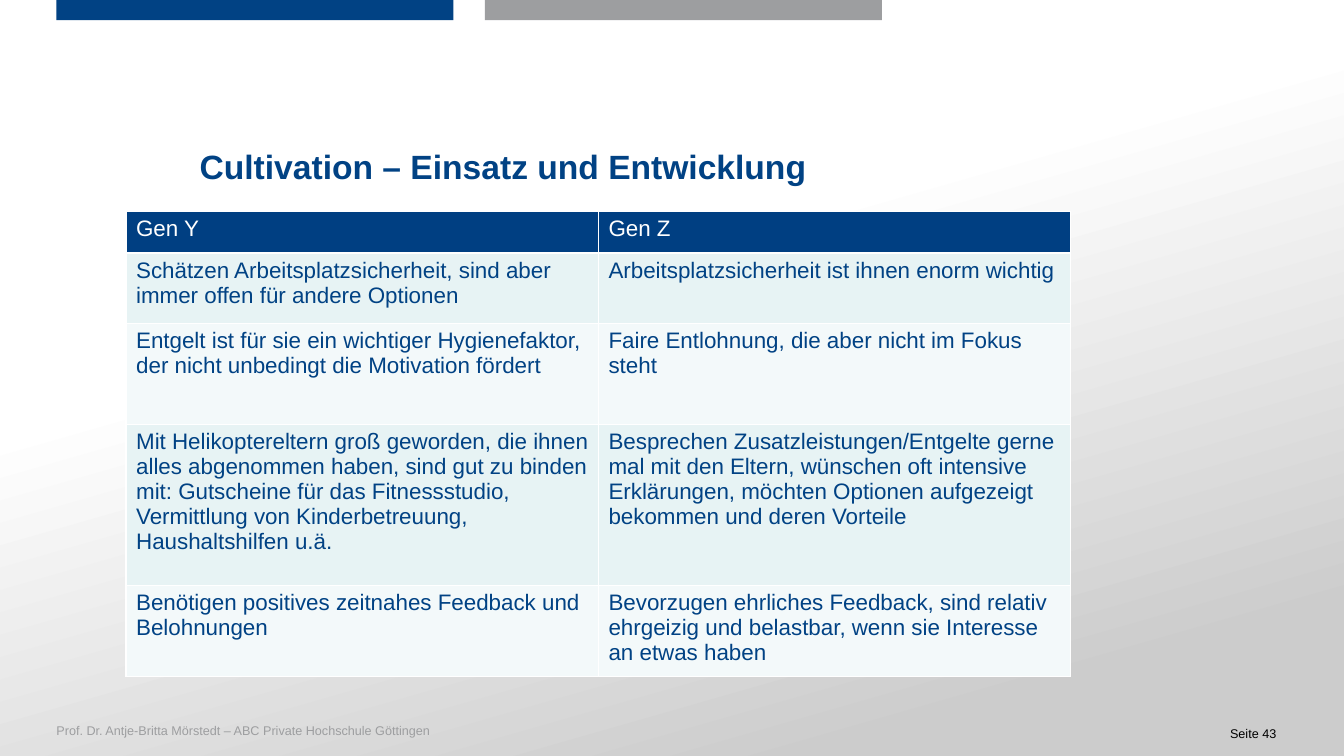
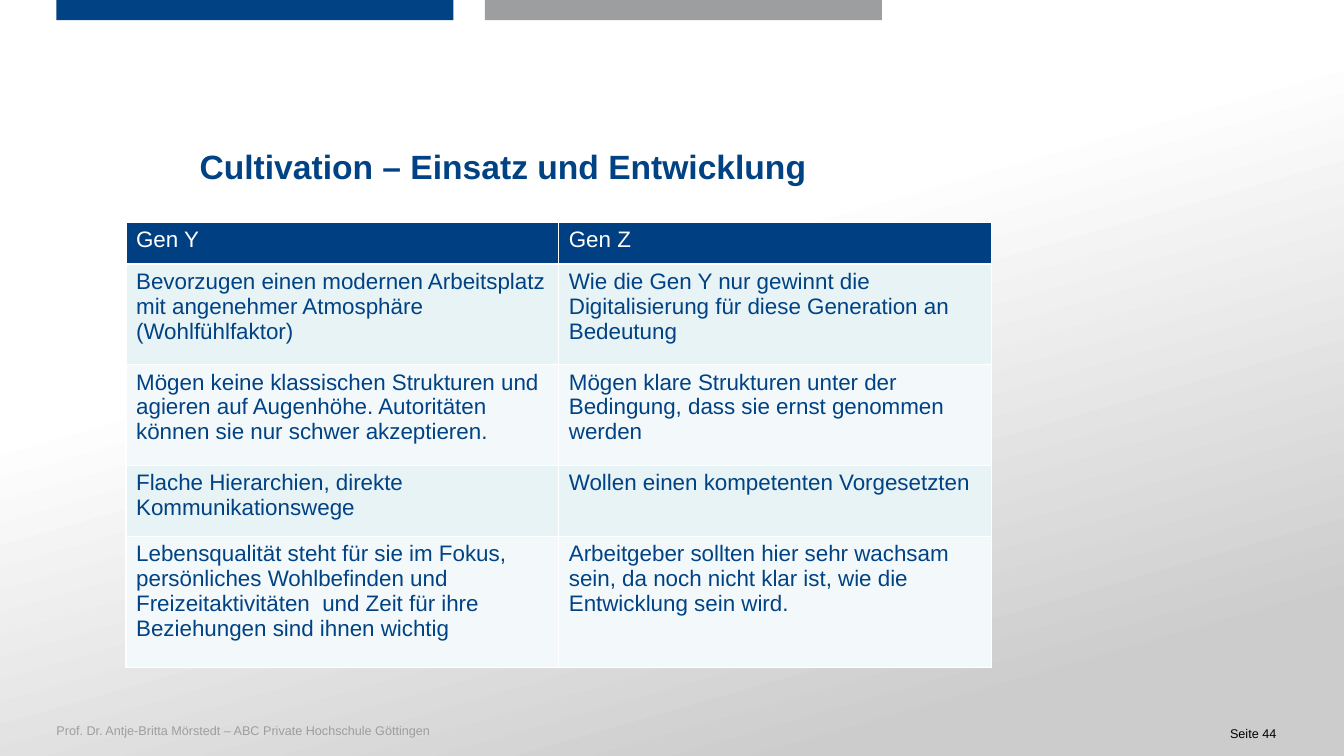
from pptx import Presentation, util as u
from pptx.dml.color import RGBColor
from pptx.enum import shapes, text
from pptx.oxml import parse_xml
from pptx.oxml.ns import nsdecls

COLORS = {
    "blue": "014284", "header": "003F82", "grey": "9D9EA0",
    "band_dark": "E7F3F4", "band_light": "F3F9FA",
    "white": "FFFFFF", "shade": "CCCCCC", "black": "000000",
}
FONT = "Arial"
COLS, ROWS = 100, 75  # grid over the whole slide
MARGIN, BAR, BAR_PITCH = 4.2, 29.54, 31.88
TABLE_LEFT = 9.38
FOOTER = "Prof. Dr. Antje-Britta Mörstedt – ABC Private Hochschule Göttingen"
TITLE = "Cultivation – Einsatz und Entwicklung"
HEADS = ("Gen Y", "Gen Z")


def rgb(name):
    return RGBColor.from_string(COLORS[name])


class Deck:
    def __init__(self):
        self.prs = Presentation()
        self.prs.slide_width, self.prs.slide_height = u.Inches(13.33), u.Inches(7.5)
        self.s = None

    def x(self, cols):
        return round(self.prs.slide_width * cols / COLS)

    def y(self, rows):
        return round(self.prs.slide_height * rows / ROWS)

    def box(self, left, top, width, height):
        return self.x(left), self.y(top), self.x(width), self.y(height)

    def slide(self, number):
        """Start a slide with the shared background, bars and footer."""
        self.s = self.prs.slides.add_slide(self.prs.slide_layouts[6])
        self.background()
        self.text(FOOTER, (MARGIN, 71.7, 79.2, 1.5), 9, "grey")
        for i, color in enumerate(("blue", "grey")):
            self.rect((MARGIN + i * BAR_PITCH, 0, BAR, 2), color)
        self.text(f"Seite {number}", (90.7, 71.4, 6.1, 2.7), 9, "black",
                  inset=(0.11, 0.06), wrap=False)

    def rect(self, area, color=None):
        sp = self.s.shapes.add_shape(shapes.MSO_SHAPE.RECTANGLE, *self.box(*area))
        sp.shadow.inherit = False
        sp.line.fill.background()
        if color:
            sp.fill.solid()
            sp.fill.fore_color.rgb = rgb(color)
        return sp

    def background(self):
        fill = self.rect((0, 0, COLS, ROWS)).fill
        fill.gradient()
        fill.gradient_angle = 360 - 74
        for stop, position, color in zip(fill.gradient_stops, (0.38, 0.87), ("white", "shade")):
            stop.position = position
            stop.color.rgb = rgb(color)

    def style(self, p, size, color, bold=False):
        for r in p.runs:
            r.font.name, r.font.size, r.font.bold = FONT, u.Pt(size), bold
            r.font.color.rgb = rgb(color)

    def text(self, words, area, size, color, bold=False, align=text.PP_ALIGN.LEFT,
             inset=(0, 0), wrap=True):
        tf = self.s.shapes.add_textbox(*self.box(*area)).text_frame
        tf.word_wrap = wrap
        tf.margin_left = tf.margin_right = u.Inches(inset[0])
        tf.margin_top = tf.margin_bottom = u.Inches(inset[1])
        tf.text = words
        p = tf.paragraphs[0]
        p.alignment = align
        self.style(p, size, color, bold)

    def title(self, words):
        self.text(words, (TABLE_LEFT, 14, 56.1, 12.5), 24, "blue", bold=True,
                  align=text.PP_ALIGN.CENTER, inset=(0.1, 0.05))

    def cell(self, cell, words, color, fill):
        cell.text = words
        self.style(cell.text_frame.paragraphs[0], 16, color)
        for side in "LRTB":
            cell._tc.get_or_add_tcPr().append(parse_xml(
                f'<a:ln{side} w="{u.Pt(1)}" {nsdecls("a")}><a:solidFill>'
                f'<a:srgbClr val="{COLORS["white"]}"/></a:solidFill></a:ln{side}>'))
        cell.fill.solid()
        cell.fill.fore_color.rgb = rgb(fill)

    def table(self, top, width, heights, rows):
        area = self.box(TABLE_LEFT, top, width, sum(heights))
        table = self.s.shapes.add_table(len(rows), len(rows[0]), *area).table
        for row, height in zip(table.rows, heights):
            row.height = self.y(height)
        for i, row in enumerate(rows):
            color = "blue" if i else "white"
            fill = ("band_dark" if i % 2 else "band_light") if i else "header"
            for j, words in enumerate(row):
                self.cell(table.cell(i, j), words, color, fill)


SLIDES = [
    dict(number=43, top=21, width=70.3, heights=(4.1, 7, 10, 16, 9), rows=[
        ("Schätzen Arbeitsplatzsicherheit, sind aber immer offen für andere Optionen",
         "Arbeitsplatzsicherheit ist ihnen enorm wichtig"),
        ("Entgelt ist für sie ein wichtiger Hygienefaktor, der nicht unbedingt die "
         "Motivation fördert",
         "Faire Entlohnung, die aber nicht im Fokus steht"),
        ("Mit Helikoptereltern groß geworden, die ihnen alles abgenommen haben, sind gut "
         "zu binden mit: Gutscheine für das Fitnessstudio, Vermittlung von "
         "Kinderbetreuung, Haushaltshilfen u.ä.",
         "Besprechen Zusatzleistungen/Entgelte gerne mal mit den Eltern, wünschen oft "
         "intensive Erklärungen, möchten Optionen aufgezeigt bekommen und deren Vorteile"),
        ("Benötigen positives zeitnahes Feedback und Belohnungen",
         "Bevorzugen ehrliches Feedback, sind relativ ehrgeizig und belastbar, wenn sie "
         "Interesse an etwas haben"),
    ]),
    dict(number=44, top=22.1, width=64.4, heights=(4.1, 10, 10, 7, 13), rows=[
        ("Bevorzugen einen modernen Arbeitsplatz mit angenehmer Atmosphäre "
         "(Wohlfühlfaktor)",
         "Wie die Gen Y nur gewinnt die Digitalisierung für diese Generation an Bedeutung"),
        ("Mögen keine klassischen Strukturen und agieren auf Augenhöhe. Autoritäten "
         "können sie nur schwer akzeptieren.",
         "Mögen klare Strukturen unter der Bedingung, dass sie ernst genommen werden"),
        ("Flache Hierarchien, direkte Kommunikationswege",
         "Wollen einen kompetenten Vorgesetzten"),
        ("Lebensqualität steht für sie im Fokus, persönliches Wohlbefinden und "
         "Freizeitaktivitäten  und Zeit für ihre Beziehungen sind ihnen wichtig",
         "Arbeitgeber sollten hier sehr wachsam sein, da noch nicht klar ist, wie die "
         "Entwicklung sein wird."),
    ]),
]


def main():
    deck = Deck()
    for page in SLIDES:
        deck.slide(page["number"])
        deck.table(page["top"], page["width"], page["heights"], [HEADS, *page["rows"]])
        deck.title(TITLE)
    deck.prs.save("out.pptx")


if __name__ == "__main__":
    main()
